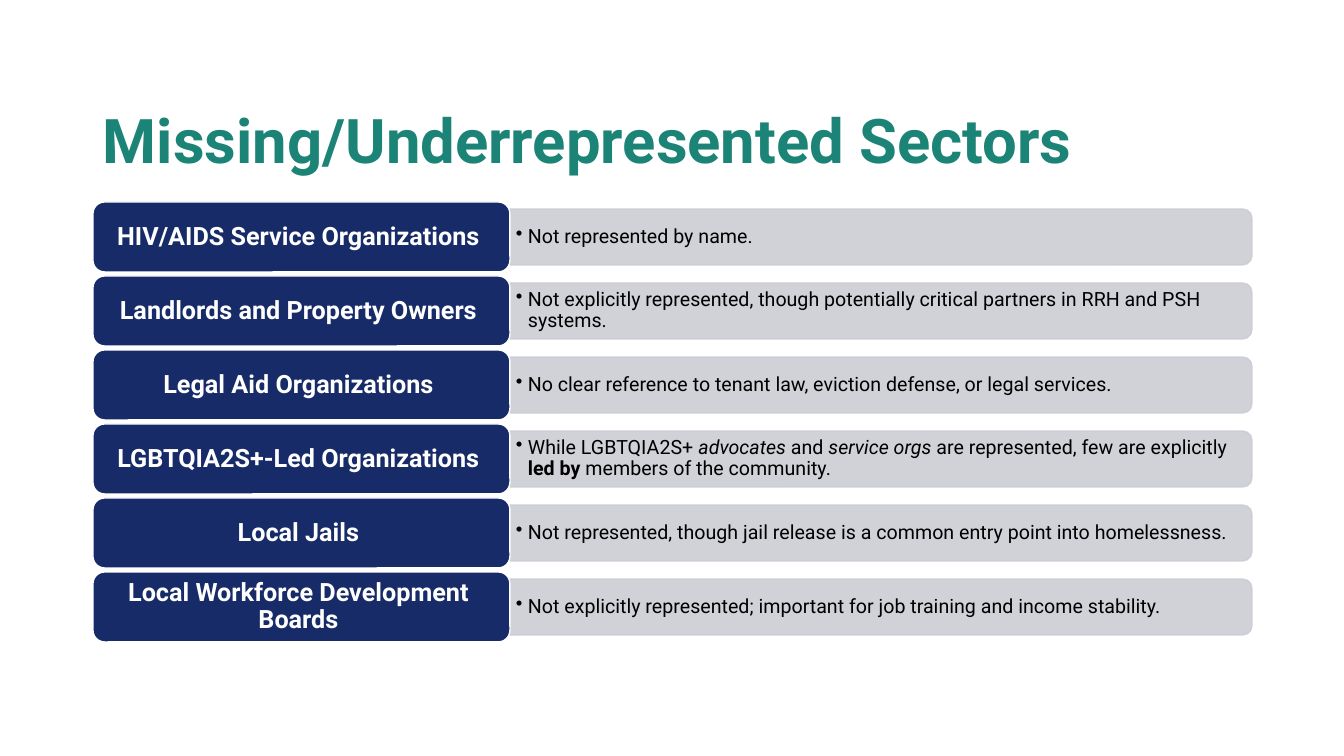
from lxml.etree import SubElement
from pptx import Presentation
from pptx.dml.color import RGBColor as RGB
from pptx.enum.shapes import MSO_SHAPE as SHAPE
from pptx.enum.text import MSO_ANCHOR as ANCHOR, MSO_AUTO_SIZE as FIT, PP_ALIGN as ALIGN
from pptx.oxml.ns import qn
from pptx.util import Pt

TEAL = RGB(0x1B, 0x84, 0x77)
NAVY = RGB(0x17, 0x2B, 0x69)
GREY = RGB(0xCC, 0xCD, 0xD4)
WHITE = RGB(0xFF, 0xFF, 0xFF)
BLACK = RGB(0x00, 0x00, 0x00)
FONT = "Roboto"

LEFT, TOP, PITCH = 93, 202, 74
LABEL_W, LABEL_H = 417, 70
BAR_W, BAR_H = 742, 56
NOTE_W, NOTE_H = 739, 50

# Each note is a list of (text, style) runs.
SECTORS = [
    ("HIV/AIDS Service Organizations",
     [("Not represented by name.", "")]),
    ("Landlords and Property Owners",
     [("Not explicitly represented, though potentially critical partners "
       "in RRH and PSH systems.", "")]),
    ("Legal Aid Organizations",
     [("No clear reference to tenant law, eviction defense, or legal services.", "")]),
    ("LGBTQIA2S+-Led Organizations",
     [("While LGBTQIA2S+ ", ""), ("advocates", "italic"), (" and ", ""),
      ("service orgs", "italic"), (" are represented, few are explicitly ", ""),
      ("led by", "bold"), (" members of the community.", "")]),
    ("Local Jails",
     [("Not represented, though jail release is a common entry point "
       "into homelessness.", "")]),
    ("Local Workforce Development Boards",
     [("Not explicitly represented; important for job training "
       "and income stability.", "")]),
]


def px(n):
    """Turn pixels at 100.8 to the inch into EMU."""
    return round(n * 914400 / 100.8)


def place(*box):
    return [px(n) for n in box]


def set_frame(frame, left, top, right, bottom):
    """Set the insets of a wrapped, vertically centred text frame."""
    frame.word_wrap = True
    frame.auto_size = FIT.NONE
    frame.vertical_anchor = ANCHOR.MIDDLE
    frame.margin_left, frame.margin_top = px(left), px(top)
    frame.margin_right, frame.margin_bottom = px(right), px(bottom)


def add_run(para, text, size, color, style=""):
    run = para.add_run()
    run.text = text
    font = run.font
    font.name, font.size = FONT, Pt(size)
    font.color.rgb = color
    font.bold = style == "bold"
    font.italic = style == "italic"


def add_bullet(para, indent):
    props = para._p.get_or_add_pPr()
    props.set("marL", str(px(indent)))
    props.set("indent", str(-px(indent)))
    SubElement(props, qn("a:buChar"), char="•")


def add_block(slide, kind, box, fill, line):
    shape = slide.shapes.add_shape(kind, *place(*box))
    shape.shadow.inherit = False
    shape.fill.solid()
    shape.fill.fore_color.rgb = fill
    shape.line.color.rgb = line
    shape.line.width = Pt(1)
    return shape


def add_title(slide, text):
    title = slide.shapes.title
    title.left, title.top, title.width, title.height = place(93, 101, 1159, 86)
    set_frame(title.text_frame, 10, 5, 10, 5)
    para = title.text_frame.paragraphs[0]
    para.alignment = ALIGN.LEFT
    para.line_spacing = 0.9
    add_run(para, text, 44, TEAL, "bold")


def add_bar(slide, mid):
    """Add a translucent bar, turned so that its round corners face right."""
    left = LEFT + LABEL_W + (BAR_W - BAR_H) / 2
    box = left, mid - BAR_W / 2, BAR_H, BAR_W
    bar = add_block(slide, SHAPE.ROUND_2_SAME_RECTANGLE, box, GREY, GREY)
    bar.rotation = 90
    for color in bar._element.spPr.iter(qn("a:srgbClr")):
        SubElement(color, qn("a:alpha"), val="90000")


def add_note(slide, mid, runs):
    box = LEFT + LABEL_W, mid - NOTE_H / 2, NOTE_W, NOTE_H
    frame = slide.shapes.add_textbox(*place(*box)).text_frame
    set_frame(frame, 6, 3, 6, 3)
    para = frame.paragraphs[0]
    para.level = 1
    para.line_spacing = 0.9
    add_bullet(para, 12)
    for text, style in runs:
        add_run(para, text, 14, BLACK, style)


def add_label(slide, mid, text):
    box = LEFT, mid - LABEL_H / 2, LABEL_W, LABEL_H
    label = add_block(slide, SHAPE.ROUNDED_RECTANGLE, box, NAVY, WHITE)
    set_frame(label.text_frame, 10, 7, 16, 7)
    para = label.text_frame.paragraphs[0]
    para.alignment = ALIGN.CENTER
    para.line_spacing = 0.9
    add_run(para, text, 18, WHITE, "bold")


def main():
    deck = Presentation()
    deck.slide_width, deck.slide_height = place(1344, 756)
    slide = deck.slides.add_slide(deck.slide_layouts.get_by_name("Title Only"))
    add_title(slide, "Missing/Underrepresented Sectors")
    for row, (name, note) in enumerate(SECTORS):
        mid = TOP + row * PITCH + LABEL_H / 2
        add_bar(slide, mid)
        add_note(slide, mid, note)
        add_label(slide, mid, name)
    deck.save("out.pptx")


if __name__ == "__main__":
    main()
